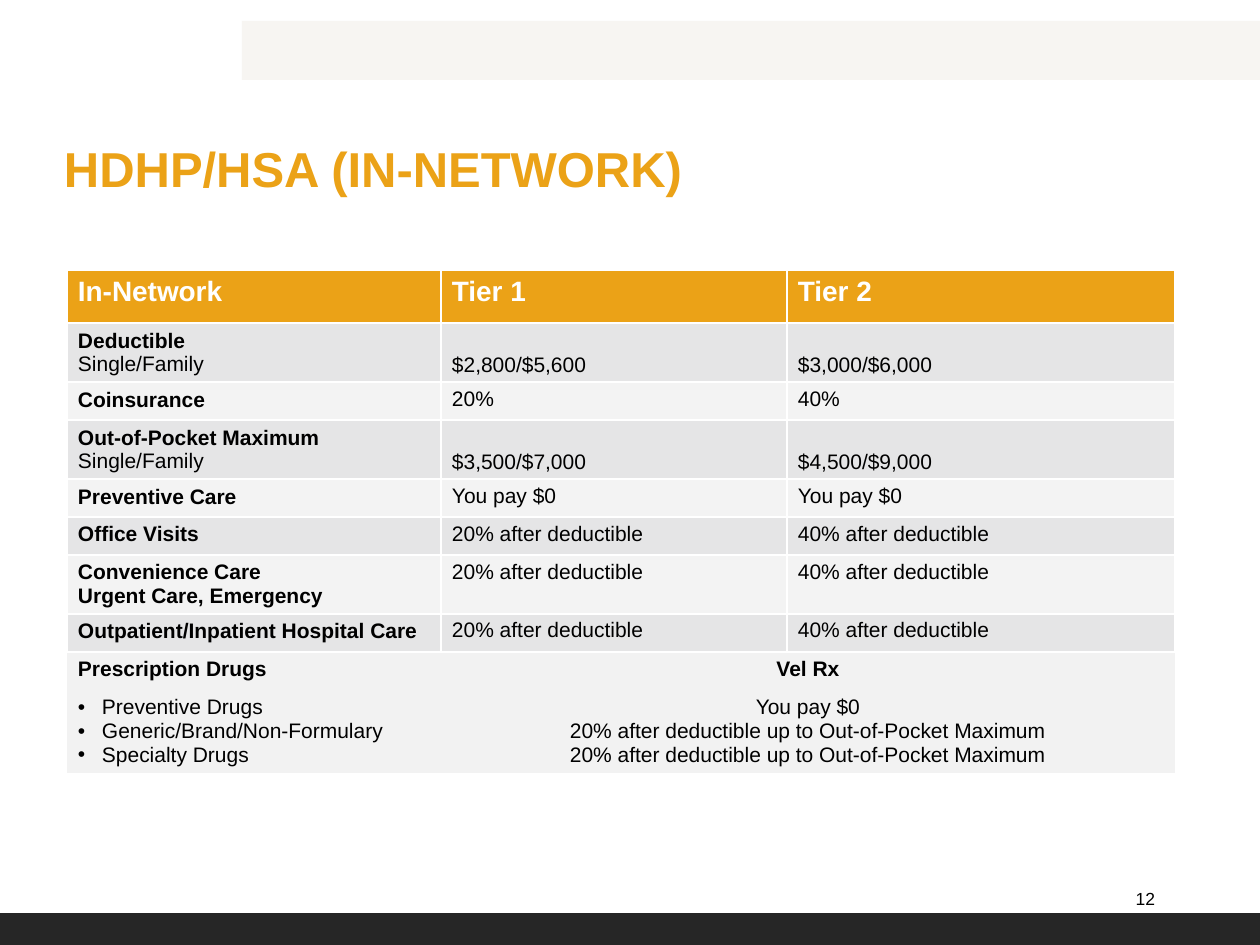
from lxml.etree import SubElement
from pptx import Presentation
from pptx.dml.color import RGBColor
from pptx.enum.shapes import MSO_SHAPE
from pptx.enum.text import MSO_ANCHOR, MSO_AUTO_SIZE, PP_ALIGN
from pptx.oxml.ns import qn
from pptx.util import Pt

EMU_PER_PX = 914400 / 126
FONT = "Arial"
COLORS = {
    "gold": "EBA217", "white": "FFFFFF", "black": "000000",
    "dark": "262626", "cream": "F7F5F2",
    "band_dark": "E5E5E6", "band_light": "F3F3F3", "drugs": "F2F2F2",
}
ALL_SIDES = "LRTB"

COLUMN_WIDTHS = [374, 346, 388]
HEADINGS = ["In-Network", "Tier 1", "Tier 2"]
# Bold label lines, plain label lines, tier 1 value, tier 2 value, row height
BENEFITS = [
    (["Deductible"], ["Single/Family"], "$2,800/$5,600", "$3,000/$6,000", 59),
    (["Coinsurance"], [], "20%", "40%", 38),
    (["Out-of-Pocket Maximum"], ["Single/Family"], "$3,500/$7,000", "$4,500/$9,000", 59),
    (["Preventive Care"], [], "You pay $0", "You pay $0", 38),
    (["Office Visits"], [], "20% after deductible", "40% after deductible", 38),
    (["Convenience Care", "Urgent Care, Emergency"], [],
     "20% after deductible", "40% after deductible", 59),
    (["Outpatient/Inpatient Hospital Care"], [],
     "20% after deductible", "40% after deductible", 38),
]
DRUGS = [
    ("Preventive Drugs", "You pay $0"),
    ("Generic/Brand/Non-Formulary", "20% after deductible up to Out-of-Pocket Maximum"),
    ("Specialty Drugs", "20% after deductible up to Out-of-Pocket Maximum"),
]


def px(length):
    return round(length * EMU_PER_PX)


def color(name):
    return RGBColor.from_string(COLORS[name])


def add_bullet(paragraph, indent):
    properties = paragraph._p.get_or_add_pPr()
    properties.set("marL", str(px(indent)))
    properties.set("indent", str(-px(indent)))
    SubElement(properties, qn("a:buFont"), typeface=FONT)
    SubElement(properties, qn("a:buChar"), char="•")


def write_lines(frame, lines, size, color_name, align=PP_ALIGN.LEFT, bullets=False):
    """Write (text, bold) pairs, one paragraph each."""
    for index, (text, bold) in enumerate(lines):
        paragraph = frame.add_paragraph() if index else frame.paragraphs[0]
        paragraph.alignment = align
        if bullets:
            add_bullet(paragraph, 24)
        run = paragraph.add_run()
        run.text = text
        run.font.name = FONT
        run.font.size = Pt(size)
        run.font.bold = bold
        run.font.color.rgb = color(color_name)


def set_margins(frame, right=0):
    frame.margin_left = frame.margin_top = frame.margin_bottom = 0
    frame.margin_right = px(right)


def add_bar(slide, left, top, width, height, color_name):
    shape = slide.shapes.add_shape(
        MSO_SHAPE.RECTANGLE, px(left), px(top), px(width), px(height))
    shape.shadow.inherit = False
    shape.fill.solid()
    shape.fill.fore_color.rgb = color(color_name)
    shape.line.fill.background()


def set_title(slide, text):
    title = slide.shapes.title
    title.left, title.top, title.width, title.height = px(64), px(136), px(1109), px(63)
    frame = title.text_frame
    frame.auto_size = MSO_AUTO_SIZE.NONE
    frame.vertical_anchor = MSO_ANCHOR.MIDDLE
    set_margins(frame)
    write_lines(frame, [(text, True)], 28, "gold")


def add_page_number(slide, number):
    box = slide.shapes.add_textbox(px(1126), px(873), px(42), px(51))
    frame = box.text_frame
    frame.word_wrap = True
    frame.vertical_anchor = MSO_ANCHOR.MIDDLE
    set_margins(frame, right=13)
    write_lines(frame, [(number, False)], 10, "black", PP_ALIGN.RIGHT)


def style_cell(cell, fill_name, sides=ALL_SIDES, top=6, bottom=1):
    """Draw white borders on the given sides only, then fill the cell."""
    properties = cell._tc.get_or_add_tcPr()
    for side in ALL_SIDES:
        line = SubElement(properties, qn(f"a:ln{side}"), w=str(Pt(1)))
        if side in sides:
            fill = SubElement(line, qn("a:solidFill"))
            SubElement(fill, qn("a:srgbClr"), val=COLORS["white"])
        else:
            SubElement(line, qn("a:noFill"))
    cell.fill.solid()
    cell.fill.fore_color.rgb = color(fill_name)
    cell.margin_left = cell.margin_right = px(11)
    cell.margin_top = px(top)
    cell.margin_bottom = px(bottom)


def fill_benefit_row(table, row, benefit):
    bold_lines, plain_lines, *values, height = benefit
    table.rows[row].height = px(height)
    fill_name = "band_dark" if row % 2 else "band_light"
    label = table.cell(row, 0)
    style_cell(label, fill_name)
    write_lines(label.text_frame,
                [(text, True) for text in bold_lines]
                + [(text, False) for text in plain_lines], 12, "black")
    for column, value in enumerate(values, 1):
        cell = table.cell(row, column)
        style_cell(cell, fill_name, top=5, bottom=5)
        # Values line up with the plain label line when there is one
        cell.vertical_anchor = MSO_ANCHOR.BOTTOM if plain_lines else MSO_ANCHOR.TOP
        write_lines(cell.text_frame, [(value, False)], 12, "black")


def fill_drug_row(table, row, labels, values, height, sides, bullets):
    table.rows[row].height = px(height)
    for column in range(len(COLUMN_WIDTHS)):
        style_cell(table.cell(row, column), "drugs", sides)
    table.cell(row, 1).merge(table.cell(row, 2))
    write_lines(table.cell(row, 0).text_frame, labels, 12, "black", bullets=bullets)
    write_lines(table.cell(row, 1).text_frame, values, 12, "black", PP_ALIGN.CENTER)


def add_benefit_table(slide):
    row_count = len(BENEFITS) + 3
    table = slide.shapes.add_table(
        row_count, len(COLUMN_WIDTHS), px(67), px(270),
        px(sum(COLUMN_WIDTHS)), px(502)).table
    table.horz_banding = False
    for column, width in zip(table.columns, COLUMN_WIDTHS):
        column.width = px(width)

    # Heading row
    table.rows[0].height = px(53)
    for column, heading in enumerate(HEADINGS):
        cell = table.cell(0, column)
        style_cell(cell, "gold")
        write_lines(cell.text_frame, [(heading, True)], 16, "white")

    # Benefit rows
    for row, benefit in enumerate(BENEFITS, 1):
        fill_benefit_row(table, row, benefit)

    # Prescription drug rows
    fill_drug_row(table, row_count - 2, [("Prescription Drugs", True)],
                  [("Vel Rx", True)], 38, "T", False)
    fill_drug_row(table, row_count - 1, [(drug, False) for drug, _ in DRUGS],
                  [(cost, False) for _, cost in DRUGS], 82, "", True)


def main():
    presentation = Presentation()
    presentation.slide_width, presentation.slide_height = px(1260), px(945)
    slide = presentation.slides.add_slide(presentation.slide_layouts[5])
    add_bar(slide, 242, 21, 1018, 59, "cream")
    set_title(slide, "HDHP/HSA (IN-NETWORK)")
    add_bar(slide, 0, 913, 1260, 32, "dark")
    add_page_number(slide, "12")
    add_benefit_table(slide)
    presentation.save("out.pptx")


if __name__ == "__main__":
    main()
